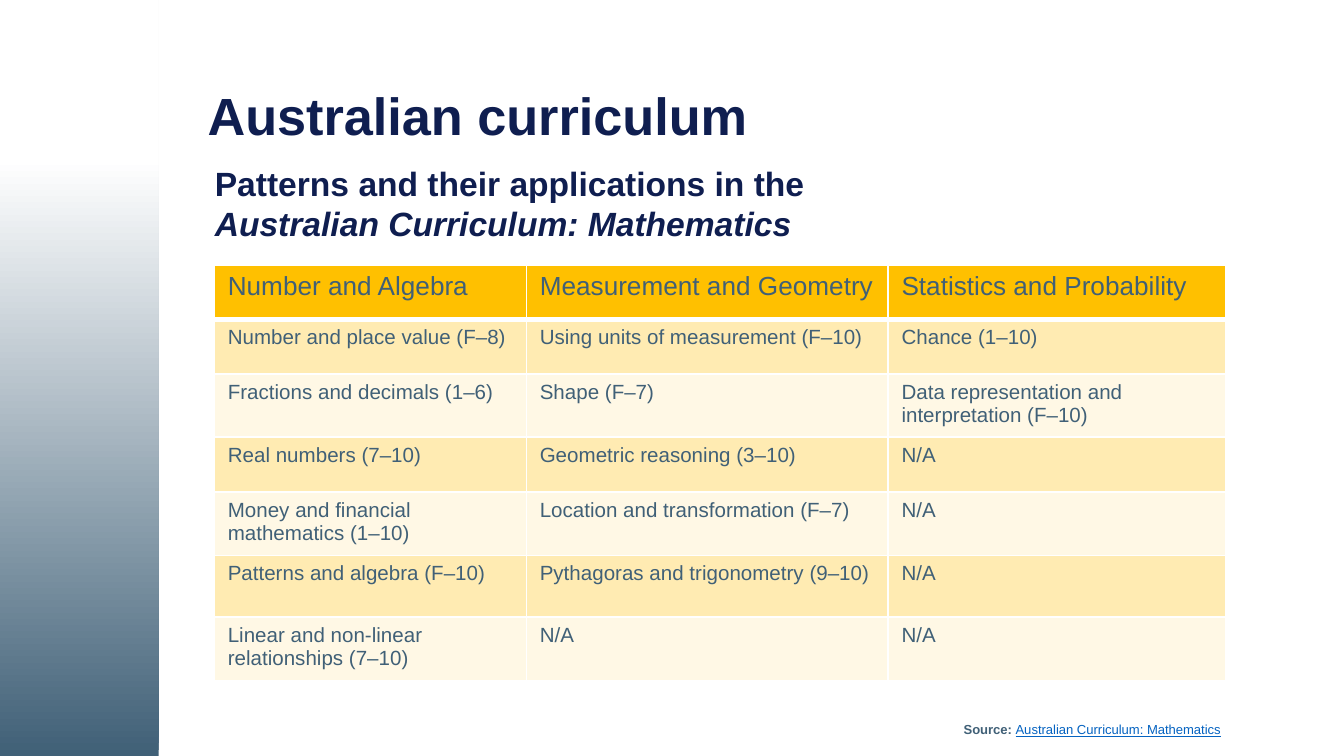
from lxml.etree import SubElement
from pptx import Presentation
from pptx.dml.color import RGBColor
from pptx.enum.shapes import MSO_SHAPE as Shape
from pptx.enum.text import MSO_ANCHOR as Anchor, MSO_AUTO_SIZE as AutoSize, PP_ALIGN as Align
from pptx.oxml.ns import qn
from pptx.util import Inches, Pt

NAVY = RGBColor(0x0F, 0x1E, 0x50)
SLATE = RGBColor(0x40, 0x60, 0x77)
GOLD = RGBColor(0xFF, 0xC0, 0x00)
LINK = RGBColor(0x05, 0x63, 0xC1)
WHITE = RGBColor(0xFF, 0xFF, 0xFF)

# Widescreen page, 16 to 9
SLIDE_WIDTH = Inches(10)
SLIDE_HEIGHT = SLIDE_WIDTH * 9 // 16
COLUMN_SHARES = (2.32, 2.69, 2.51)
ROW_SHARES = (0.40, 0.41, 0.46, 0.41, 0.47, 0.46, 0.47)
STRANDS = (
    ("Number and Algebra", "Measurement and Geometry", "Statistics and Probability"),
    ("Number and place value (F–8)", "Using units of measurement (F–10)", "Chance (1–10)"),
    ("Fractions and decimals (1–6)", "Shape (F–7)",
     "Data representation and interpretation (F–10)"),
    ("Real numbers (7–10)", "Geometric reasoning (3–10)", "N/A"),
    ("Money and financial mathematics (1–10)", "Location and transformation (F–7)", "N/A"),
    ("Patterns and algebra (F–10)", "Pythagoras and trigonometry (9–10)", "N/A"),
    ("Linear and non-linear relationships (7–10)", "N/A", "N/A"),
)


def percent_box(left, top, width, height):
    """Turn percentages of the slide's size into a box of lengths."""
    return (int(SLIDE_WIDTH * left / 100), int(SLIDE_HEIGHT * top / 100),
            int(SLIDE_WIDTH * width / 100), int(SLIDE_HEIGHT * height / 100))


def style(span, size, color, bold=False):
    span.font.name = "Arial"
    span.font.size = Pt(size)
    span.font.bold = bold
    span.font.color.rgb = color


# Band that fades upwards along the left edge
def add_side_band(page, box):
    band = page.shapes.add_shape(Shape.RECTANGLE, *box)
    band.shadow.inherit = False
    band.line.fill.background()
    band.fill.gradient()
    band.fill.gradient_angle = 90
    for stop, color, position in zip(band.fill.gradient_stops, (SLATE, WHITE), (0, 0.79)):
        stop.color.rgb = color
        stop.position = position


# Headings
def place_title(page, box):
    title = page.shapes.title
    title.left, title.top, title.width, title.height = box
    frame = title.text_frame
    frame.text = "Australian curriculum"
    frame.auto_size = AutoSize.NONE
    frame.vertical_anchor = Anchor.MIDDLE
    para = frame.paragraphs[0]
    para.alignment = Align.LEFT
    para.line_spacing = 0.9
    style(para.runs[0], 28, NAVY, bold=True)


def add_text(page, box):
    frame = page.shapes.add_textbox(*box).text_frame
    frame.word_wrap = True
    frame.auto_size = AutoSize.SHAPE_TO_FIT_TEXT
    return frame.paragraphs[0]


def add_subtitle(page, box):
    para = add_text(page, box)
    para.text = "Patterns and their applications in the \vAustralian Curriculum: Mathematics"
    for span in para.runs:
        style(span, 18, NAVY, bold=True)
    para.runs[-1].font.italic = True


# Source line
def add_source(page, box):
    para = add_text(page, box)
    para.text = "Source: "
    style(para.runs[0], 7, SLATE, bold=True)
    work = para.add_run()
    work.text = "Australian Curriculum: Mathematics"
    style(work, 7, LINK)
    work.font.underline = True


# Table of strands
def set_borders(cell, bottom_width):
    properties = cell._tc.get_or_add_tcPr()
    for side, width in (("L", 1), ("R", 1), ("T", 1), ("B", bottom_width)):
        line = SubElement(properties, qn(f"a:ln{side}"), w=str(Pt(width)))
        fill = SubElement(line, qn("a:solidFill"))
        SubElement(fill, qn("a:srgbClr"), val=str(WHITE))


def fill_gold(cell, opacity):
    cell.fill.solid()
    cell.fill.fore_color.rgb = GOLD
    if opacity < 100:
        color = cell._tc.tcPr.find(qn("a:solidFill")).find(qn("a:srgbClr"))
        SubElement(color, qn("a:alpha"), val=str(opacity * 1000))


def add_strand_table(page, box):
    table = page.shapes.add_table(len(STRANDS), len(COLUMN_SHARES), *box).table
    for column, share in zip(table.columns, COLUMN_SHARES):
        column.width = int(box[2] * share / sum(COLUMN_SHARES))
    for row, share in zip(table.rows, ROW_SHARES):
        row.height = int(box[3] * share / sum(ROW_SHARES))
    for row_index, strand_row in enumerate(STRANDS):
        header = row_index == 0
        opacity = 100 if header else 30 if row_index % 2 else 10
        for column_index, text in enumerate(strand_row):
            cell = table.cell(row_index, column_index)
            cell.text = text
            style(cell.text_frame.paragraphs[0].runs[0], 14 if header else 11, SLATE)
            set_borders(cell, 3 if header else 1)
            fill_gold(cell, opacity)


def main():
    deck = Presentation()
    deck.slide_width, deck.slide_height = SLIDE_WIDTH, SLIDE_HEIGHT
    page = deck.slides.add_slide(deck.slide_layouts[5])
    add_side_band(page, percent_box(0, 0, 11.8, 100))
    place_title(page, percent_box(14.45, 6.58, 72.3, 18.33))
    add_subtitle(page, percent_box(15, 20.64, 76.5, 12.63))
    add_strand_table(page, percent_box(15.95, 35.1, 75.25, 54.8))
    add_source(page, percent_box(70.72, 94.6, 21.3, 3.91))
    deck.save("out.pptx")


if __name__ == "__main__":
    main()
